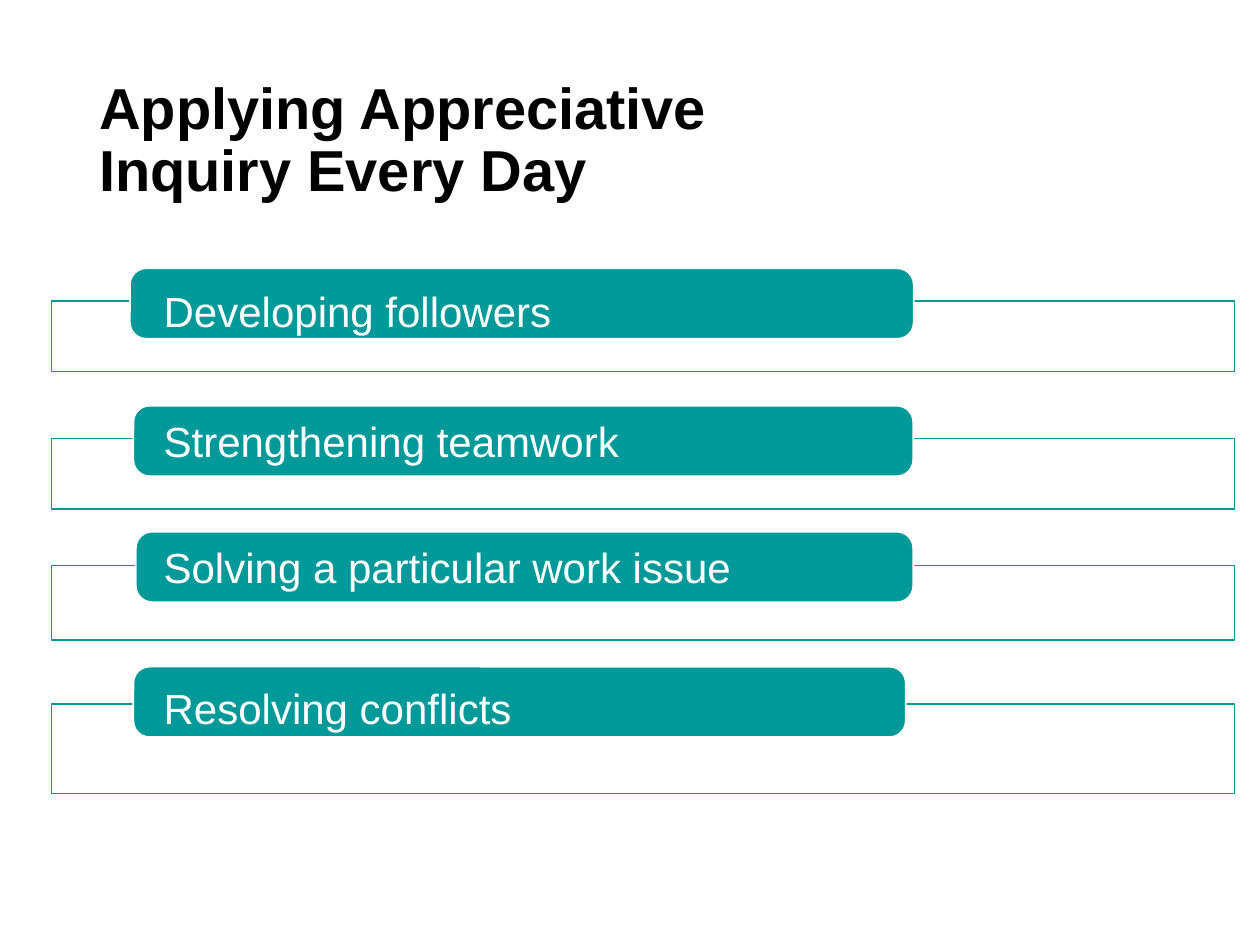
from dataclasses import dataclass

from pptx import Presentation
from pptx.dml.color import RGBColor
from pptx.enum.shapes import MSO_SHAPE
from pptx.enum.text import MSO_ANCHOR
from pptx.util import Cm, Pt


@dataclass(frozen=True)
class Theme:
    """Colours, font and type sizes of the slide."""
    teal: RGBColor = RGBColor(0x00, 0x99, 0x99)
    white: RGBColor = RGBColor(0xFF, 0xFF, 0xFF)
    black: RGBColor = RGBColor(0x00, 0x00, 0x00)
    face: str = "Arial"
    head: Pt = Pt(33)
    body: Pt = Pt(24)
    rule: Pt = Pt(1)


@dataclass(frozen=True)
class Row:
    """One topic: frame top and height, tab offsets and width in cm, gap after in points."""
    topic: str
    top: float
    height: float
    inset: float
    rise: float
    width: float
    gap: float


THEME = Theme()
TAB = 1.42
ROWS = [
    Row("Developing followers", 0, 1.42, 1.58, 0.66, 15.8, 48),
    Row("Strengthening teamwork", 2.77, 1.42, 1.65, 0.66, 15.72, 46.5),
    Row("Solving a particular work issue", 5.33, 1.5, 1.7, 0.68, 15.67, 54.5),
    Row("Resolving conflicts", 8.13, 1.8, 1.65, 0.76, 15.57, 0),
]


def apply(item, style):
    """Set every attribute named in a style dict."""
    for name, value in style.items():
        setattr(item, name, value)


def add_box(slide, kind, box, fill, line):
    """Draw a preset shape in a box given in cm."""
    shape = slide.shapes.add_shape(kind, *map(Cm, box))
    shape.shadow.inherit = False
    if fill is None:
        shape.fill.background()
    else:
        shape.fill.solid()
        shape.fill.fore_color.rgb = fill
    shape.line.color.rgb = line
    shape.line.width = THEME.rule
    return shape


def add_text(slide, box, lines, anchor, font, color):
    """Write (text, gap after) paragraphs in a box given in cm."""
    frame = slide.shapes.add_textbox(*map(Cm, box)).text_frame
    apply(frame, {"word_wrap": True, "vertical_anchor": anchor})
    for index, (text, gap) in enumerate(lines):
        para = frame.add_paragraph() if index else frame.paragraphs[0]
        para.text = text
        apply(para, {"line_spacing": 0.9, "space_after": Pt(gap)})
        apply(para.font, {"name": THEME.face, **font})
        para.font.color.rgb = color


def add_title(slide, box):
    """Place the slide title."""
    add_text(slide, box, [("Applying Appreciative\vInquiry Every Day", 0)],
             MSO_ANCHOR.MIDDLE, {"size": THEME.head, "bold": True}, THEME.black)


def add_list(slide, box):
    """Place the framed tabs and the topics over them."""
    left, top, width, height = box
    for row in ROWS:
        y = top + row.top
        add_box(slide, MSO_SHAPE.RECTANGLE, (left, y, width, row.height),
                None, THEME.teal)
        tab = add_box(slide, MSO_SHAPE.ROUNDED_RECTANGLE,
                      (left + row.inset, y - row.rise, row.width, TAB),
                      THEME.teal, THEME.white)
        tab.adjustments[0] = 0.23
    add_text(slide, (left + 2.01, top - 0.32, 19.8, height),
             [(row.topic, row.gap) for row in ROWS],
             MSO_ANCHOR.TOP, {"size": THEME.body}, THEME.white)


def main():
    """Build and save the slide."""
    deck = Presentation()
    apply(deck, {"slide_width": Cm(25.4), "slide_height": Cm(19.05)})
    slide = deck.slides.add_slide(deck.slide_layouts[6])
    add_title(slide, (1.75, 1.02, 19.18, 3.68))
    add_list(slide, (1.04, 6.07, 23.85, 9.93))
    deck.save("out.pptx")


if __name__ == "__main__":
    main()
